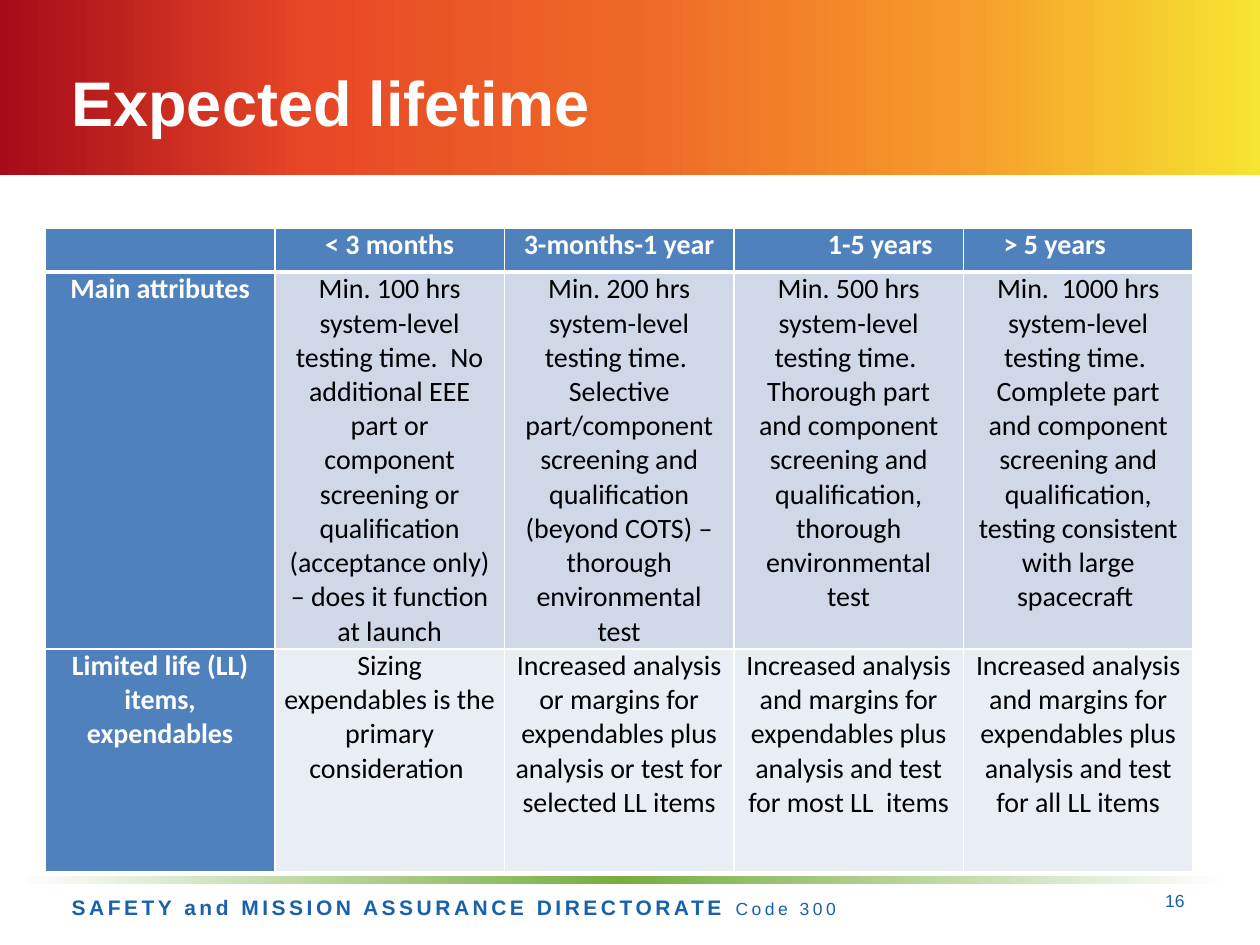
from dataclasses import dataclass

from lxml import etree
from pptx import Presentation
from pptx.dml.color import RGBColor
from pptx.enum.shapes import MSO_SHAPE
from pptx.enum.text import MSO_ANCHOR, PP_ALIGN
from pptx.oxml.ns import qn
from pptx.util import Inches, Pt

RECTANGLE = MSO_SHAPE.RECTANGLE
TOP, MIDDLE = MSO_ANCHOR.TOP, MSO_ANCHOR.MIDDLE
LEFT, CENTER, RIGHT = PP_ALIGN.LEFT, PP_ALIGN.CENTER, PP_ALIGN.RIGHT
WHITE, BLACK, NAVY, GREEN = "FFFFFF", "000000", "1861AC", "77AD3F"
HEADER_FILL, BODY_FILLS = "4F81BD", ("D0D8E8", "E9EDF4")
BORDER_TAGS = ("a:lnL", "a:lnR", "a:lnT", "a:lnB")


@dataclass
class Box:
    left: float
    top: float
    width: float
    height: float

    def lengths(self) -> list:
        return [Inches(n) for n in (self.left, self.top, self.width, self.height)]


@dataclass
class Style:
    size: float
    color: str
    bold: bool = False
    name: str = "Arial"
    spacing: float = 0


@dataclass
class GradientBar:
    box: Box
    stops: list


@dataclass
class Label:
    box: Box
    runs: list
    align: PP_ALIGN = LEFT
    anchor: MSO_ANCHOR = MIDDLE


SLIDE = Box(0, 0, 10, 7.5)
BARS = [
    GradientBar(Box(0, 0, SLIDE.width, 1.39),
                [(0, "A60B19"), (25, "E94826"), (50, "ED6827"), (75, "F6982A"), (100, "F6E431")]),
    GradientBar(Box(0.12, 6.95, 9.61, 0.07), [(0, WHITE), (50, GREEN), (100, WHITE)]),
]
LABELS = [
    Label(Box(0.47, 7.05, 8.25, 0.3),
          [("SAFETY and MISSION ASSURANCE DIRECTORATE ", Style(12, NAVY, True, spacing=2)),
           ("Code 300", Style(10, NAVY, spacing=2))], anchor=TOP),
    Label(Box(0.47, 0.18, 9, 1.25), [("Expected lifetime", Style(36, WHITE, True))]),
    Label(Box(7.17, 6.95, 2.33, 0.4), [("16", Style(10, NAVY))], align=RIGHT),
]

# The middle row holds eleven full lines of text
ROW_HEIGHTS = (0.35, 2.99, 1.77)
TABLE_BOX = Box(0.36, 1.81, 9.11, sum(ROW_HEIGHTS))
ROWS = [
    ["", "< 3 months", "3-months-1 year", "1-5 years", "> 5 years"],
    ["Main attributes",
     "Min. 100 hrs system-level testing time.  No additional EEE part or component screening "
     "or qualification (acceptance only) – does it function at launch",
     "Min. 200 hrs system-level testing time.  Selective part/component screening and "
     "qualification (beyond COTS) – thorough environmental test",
     "Min. 500 hrs system-level testing time.  Thorough part and component screening and "
     "qualification, thorough environmental test",
     "Min.  1000 hrs system-level testing time.  Complete part and component screening and "
     "qualification, testing consistent with large spacecraft "],
    ["Limited life (LL) items, expendables",
     "Sizing expendables is the primary consideration ",
     "Increased analysis or margins for expendables plus analysis or test for selected LL items",
     "Increased analysis and margins for expendables plus analysis and test for most LL  items",
     "Increased analysis and margins for expendables plus analysis and test for all LL items"],
]
# Header cells with their own margin and first-line indent
HEADER_INDENTS = {3: (0.81, -0.31), 4: (0.25, 0)}


def rgb(color: str) -> RGBColor:
    return RGBColor.from_string(color)


def set_font(font, style: Style) -> None:
    font.name, font.size, font.bold = style.name, Pt(style.size), style.bold
    font.color.rgb = rgb(style.color)


def draw_bar(slide, bar: GradientBar) -> None:
    shape = slide.shapes.add_shape(RECTANGLE, *bar.box.lengths())
    shape.shadow.inherit = False
    shape.line.fill.background()
    shape.fill.gradient()
    shape.fill.gradient_angle = 0
    stop_list = shape.fill._fill._gradFill.find(qn("a:gsLst"))
    for stop in list(stop_list):
        stop_list.remove(stop)
    for percent, color in bar.stops:
        stop = etree.SubElement(stop_list, qn("a:gs"), pos=str(percent * 1000))
        etree.SubElement(stop, qn("a:srgbClr"), val=color)


def draw_label(slide, label: Label) -> None:
    frame = slide.shapes.add_textbox(*label.box.lengths()).text_frame
    frame.word_wrap = True
    frame.vertical_anchor = label.anchor
    paragraph = frame.paragraphs[0]
    paragraph.alignment = label.align
    for text, style in label.runs:
        run = paragraph.add_run()
        run.text = text
        set_font(run.font, style)
        if style.spacing:
            run.font._element.set("spc", str(int(style.spacing * 100)))


def set_borders(cell, top_width: float, bottom_width: float) -> None:
    properties = cell._tc.get_or_add_tcPr()
    widths = {"a:lnT": top_width, "a:lnB": bottom_width}
    for index, tag in enumerate(BORDER_TAGS):
        line = etree.Element(qn(tag), w=str(Pt(widths.get(tag, 1))))
        fill = etree.SubElement(line, qn("a:solidFill"))
        etree.SubElement(fill, qn("a:srgbClr"), val=WHITE)
        properties.insert(index, line)


def fill_cell(cell, text: str, row: int, column: int) -> None:
    heading = row == 0 or column == 0
    cell.margin_left = cell.margin_right = Inches(0.07)
    cell.margin_top = cell.margin_bottom = 0
    cell.fill.solid()
    cell.fill.fore_color.rgb = rgb(HEADER_FILL if heading else BODY_FILLS[row - 1])
    set_borders(cell, 3 if row == 1 else 1, 3 if row == 0 else 1)
    paragraph = cell.text_frame.paragraphs[0]
    paragraph.alignment = CENTER
    if text:
        paragraph.add_run().text = text
    set_font(paragraph.font, Style(16, WHITE if heading else BLACK, heading, "Calibri"))
    if row == 0 and column in HEADER_INDENTS:
        margin, indent = HEADER_INDENTS[column]
        paragraph.alignment = CENTER if indent else LEFT
        paragraph.level = 1 if indent else 0
        properties = paragraph._p.get_or_add_pPr()
        properties.set("marL", str(Inches(margin)))
        properties.set("indent", str(Inches(indent)))


def draw_table(slide) -> None:
    table = slide.shapes.add_table(len(ROWS), len(ROWS[0]), *TABLE_BOX.lengths()).table
    for row, texts in enumerate(ROWS):
        table.rows[row].height = Inches(ROW_HEIGHTS[row])
        for column, text in enumerate(texts):
            fill_cell(table.cell(row, column), text, row, column)


def main() -> None:
    presentation = Presentation()
    presentation.slide_width = Inches(SLIDE.width)
    presentation.slide_height = Inches(SLIDE.height)
    slide = presentation.slides.add_slide(presentation.slide_layouts[6])
    # Header band and footer rule, then the texts, then the table
    for bar in BARS:
        draw_bar(slide, bar)
    for label in LABELS:
        draw_label(slide, label)
    draw_table(slide)
    presentation.save("out.pptx")


if __name__ == "__main__":
    main()
